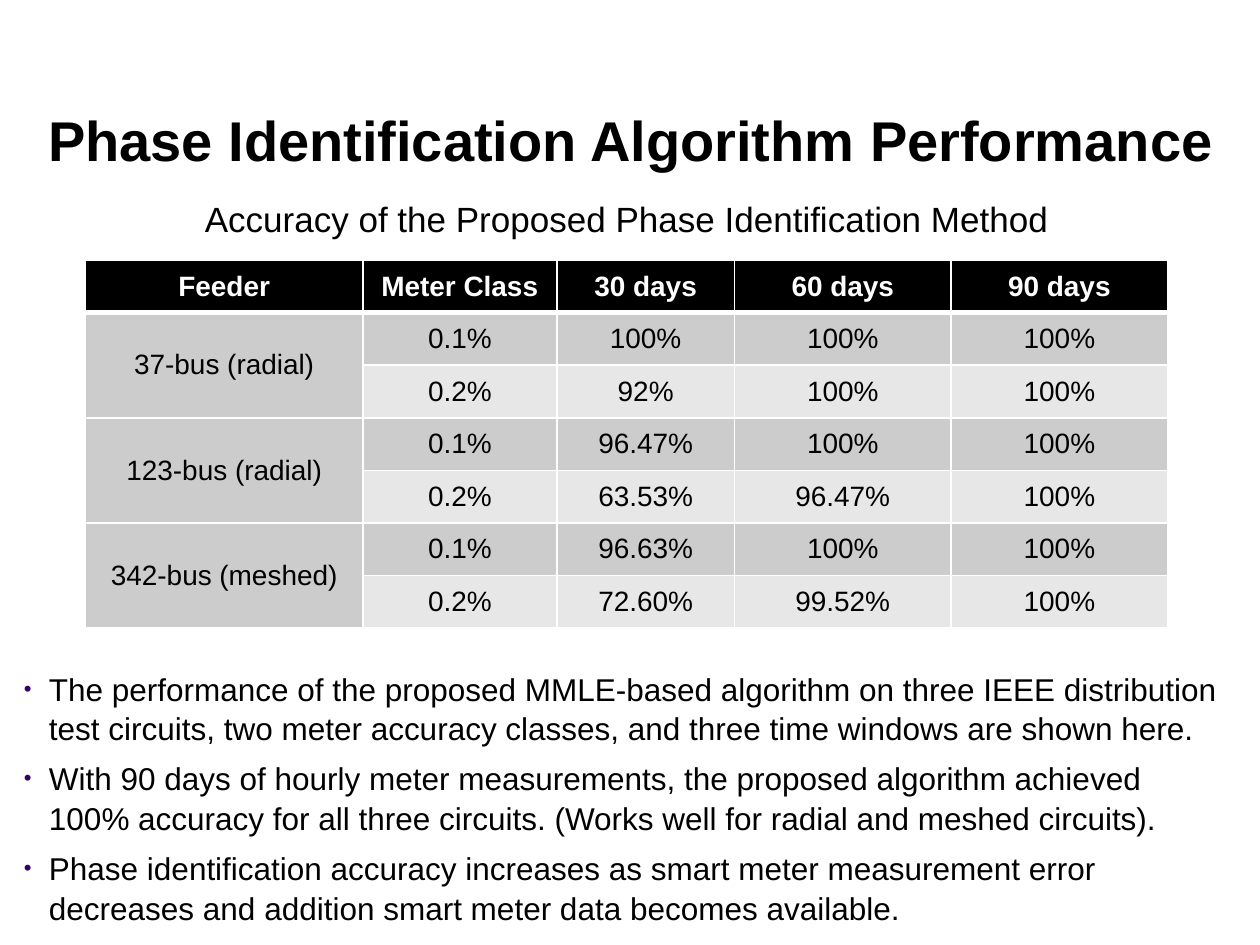
"""Build the slide on phase identification algorithm performance."""
from dataclasses import dataclass

from lxml.etree import SubElement
from pptx import Presentation
from pptx.dml.color import RGBColor
from pptx.enum.text import MSO_ANCHOR, MSO_AUTO_SIZE, PP_ALIGN
from pptx.oxml.ns import qn
from pptx.util import Pt

FONT = "Arial"
BLACK, WHITE = "000000", "FFFFFF"
DARK_BAND, LIGHT_BAND = "CCCCCC", "E7E7E7"
BULLET_COLOR = "330066"
ROW_HEIGHT = 30.05
COLUMN_WIDTHS = (158.4, 110.9, 101.5, 123.8, 123.8)
HEADERS = ("Feeder", "Meter Class", "30 days", "60 days", "90 days")
BULLETS = (
    "The performance of the proposed MMLE-based algorithm on three IEEE distribution "
    "test circuits, two meter accuracy classes, and three time windows are shown here.",
    "With 90 days of hourly meter measurements, the proposed algorithm achieved "
    "100% accuracy for all three circuits. (Works well for radial and meshed circuits).",
    "Phase identification accuracy increases as smart meter measurement error "
    "decreases and addition smart meter data becomes available.",
)


@dataclass(frozen=True)
class Feeder:
    name: str
    class_01: tuple[str, str, str]
    class_02: tuple[str, str, str]


FEEDERS = (
    Feeder("37-bus (radial)", ("100%", "100%", "100%"), ("92%", "100%", "100%")),
    Feeder("123-bus (radial)", ("96.47%", "100%", "100%"), ("63.53%", "96.47%", "100%")),
    Feeder("342-bus (meshed)", ("96.63%", "100%", "100%"), ("72.60%", "99.52%", "100%")),
)


def rgb(color: str) -> RGBColor:
    return RGBColor.from_string(color)


def format_paragraph(paragraph, size: float, color: str = BLACK, bold: bool = False,
                     alignment=PP_ALIGN.CENTER) -> None:
    paragraph.alignment = alignment
    font = paragraph.font
    font.name, font.size, font.bold = FONT, Pt(size), bold
    font.color.rgb = rgb(color)


def add_title(slide, text: str) -> None:
    title = slide.shapes.title
    title.left, title.top, title.width, title.height = Pt(9.4), Pt(59.8), Pt(702.7), Pt(42.5)
    frame = title.text_frame
    frame.text = text
    frame.auto_size = MSO_AUTO_SIZE.NONE
    frame.vertical_anchor = MSO_ANCHOR.BOTTOM
    format_paragraph(frame.paragraphs[0], 32, bold=True)


def add_caption(slide, text: str) -> None:
    frame = slide.shapes.add_textbox(Pt(108), Pt(109.4), Pt(500.4), Pt(31.5)).text_frame
    frame.word_wrap = False
    frame.auto_size = MSO_AUTO_SIZE.SHAPE_TO_FIT_TEXT
    frame.text = text
    format_paragraph(frame.paragraphs[0], 20)


def add_bullet(paragraph, indent: float) -> None:
    properties = paragraph._p.get_or_add_pPr()
    properties.set("marL", str(Pt(indent)))
    properties.set("indent", str(-Pt(indent)))
    bullet_color = SubElement(properties, qn("a:buClr"))
    SubElement(bullet_color, qn("a:srgbClr"), val=BULLET_COLOR)
    SubElement(properties, qn("a:buSzPct"), val="70000")
    SubElement(properties, qn("a:buFont"), typeface=FONT)
    SubElement(properties, qn("a:buChar"), char="•")


def add_findings(slide, findings: tuple[str, ...]) -> None:
    frame = slide.shapes.add_textbox(Pt(6.5), Pt(378), Pt(697), Pt(144)).text_frame
    frame.word_wrap = True
    for index, finding in enumerate(findings):
        paragraph = frame.add_paragraph() if index else frame.paragraphs[0]
        paragraph.text = finding
        add_bullet(paragraph, 14.4)
        paragraph.line_spacing = 1.05
        if index:
            paragraph.space_before = Pt(6)
        format_paragraph(paragraph, 18, alignment=PP_ALIGN.LEFT)


def add_borders(cell, top: float, bottom: float) -> None:
    properties = cell._tc.get_or_add_tcPr()
    for side, width in (("L", 1), ("R", 1), ("T", top), ("B", bottom)):
        line = SubElement(properties, qn(f"a:ln{side}"), w=str(Pt(width)))
        fill = SubElement(line, qn("a:solidFill"))
        SubElement(fill, qn("a:srgbClr"), val=WHITE)


def format_cell(cell, row: int, fill: str) -> None:
    is_header = row == 0
    add_borders(cell, top=3 if row == 1 else 1, bottom=3 if is_header else 1)
    cell.fill.solid()
    cell.fill.fore_color.rgb = rgb(fill)
    cell.vertical_anchor = MSO_ANCHOR.MIDDLE
    format_paragraph(cell.text_frame.paragraphs[0], 16, WHITE if is_header else BLACK, is_header)


def add_accuracy_table(slide, feeders: tuple[Feeder, ...]) -> None:
    rows = [HEADERS]
    for feeder in feeders:
        rows.append((feeder.name, "0.1%", *feeder.class_01))
        rows.append(("", "0.2%", *feeder.class_02))
    table = slide.shapes.add_table(len(rows), len(HEADERS), Pt(48.9), Pt(148.6),
                                   Pt(sum(COLUMN_WIDTHS)), Pt(ROW_HEIGHT * len(rows))).table
    for column, width in zip(table.columns, COLUMN_WIDTHS):
        column.width = Pt(width)
    for row_index, values in enumerate(rows):
        table.rows[row_index].height = Pt(ROW_HEIGHT)
        band = DARK_BAND if row_index % 2 else LIGHT_BAND
        for column_index, value in enumerate(values):
            cell = table.cell(row_index, column_index)
            cell.text = value
            body_fill = band if column_index else DARK_BAND
            format_cell(cell, row_index, body_fill if row_index else BLACK)
    for row_index in range(1, len(rows), 2):
        table.cell(row_index, 0).merge(table.cell(row_index + 1, 0))


def main() -> None:
    presentation = Presentation()
    presentation.slide_width, presentation.slide_height = Pt(720), Pt(540)
    slide = presentation.slides.add_slide(presentation.slide_layouts[5])
    add_title(slide, "Phase Identification Algorithm Performance")
    add_findings(slide, BULLETS)
    add_accuracy_table(slide, FEEDERS)
    add_caption(slide, "Accuracy of the Proposed Phase Identification Method")
    presentation.save("out.pptx")


if __name__ == "__main__":
    main()
